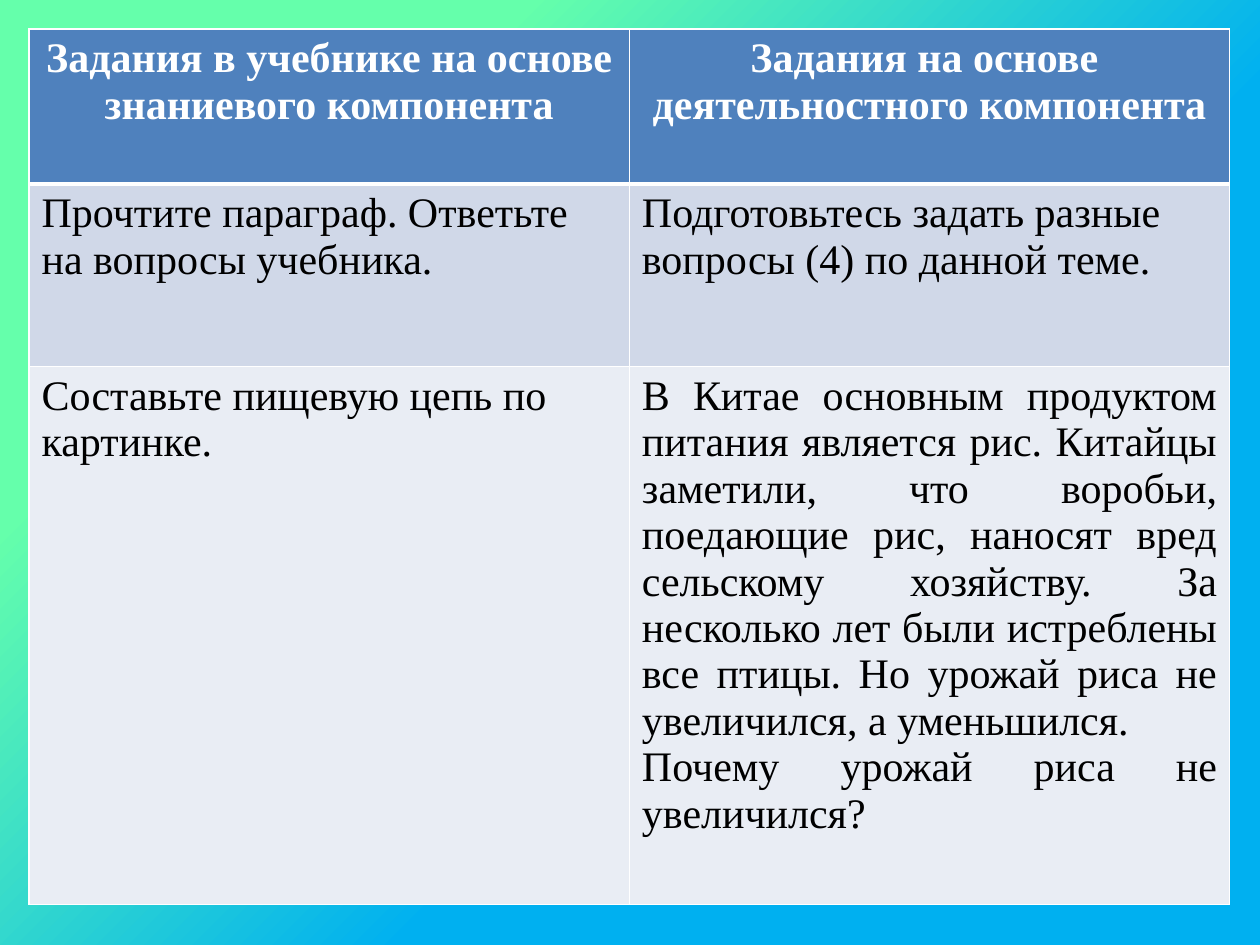
import pptx
import pptx.dml.color
import pptx.enum.text
import pptx.oxml
import pptx.oxml.ns
import pptx.util
from dataclasses import dataclass

Inches = pptx.util.Inches
ALIGN = pptx.enum.text.PP_ALIGN


@dataclass(frozen=True)
class Theme:
    font: str = "Times New Roman"
    size: int = 24
    header_text: str = "FFFFFF"
    body_text: str = "000000"
    row_fills: tuple = ("4F81BD", "D0D8E8", "E9EDF4")
    border: str = "FFFFFF"
    thin: int = 1
    thick: int = 3
    gradient: tuple = (("65FFAB", 0.24), ("00B0F0", 0.61))


THEME = Theme()

# Each row: height in inches, then (alignment, paragraphs) for every cell
ROWS = [
    (1.23, [
        (ALIGN.CENTER, ["Задания в учебнике на основе знаниевого компонента"]),
        (ALIGN.CENTER, ["Задания на основе ", "деятельностного компонента"]),
    ]),
    (1.45, [
        (ALIGN.LEFT, ["Прочтите параграф. Ответьте на вопросы учебника."]),
        (ALIGN.LEFT, ["Подготовьтесь задать разные вопросы (4) по данной теме."]),
    ]),
    (4.27, [
        (ALIGN.LEFT, ["Составьте пищевую цепь по картинке."]),
        (ALIGN.JUSTIFY, [
            "В Китае основным продуктом питания является рис. Китайцы заметили, "
            "что воробьи, поедающие рис, наносят вред сельскому хозяйству. "
            "За несколько лет были истреблены все птицы. "
            "Но урожай риса не увеличился, а уменьшился. ",
            "Почему урожай риса не увеличился?",
        ]),
    ]),
]


def rgb(value):
    return pptx.dml.color.RGBColor.from_string(value)


def paint_background(slide):
    fill = slide.background.fill
    fill.gradient()
    fill.gradient_angle = 315  # counter-clockwise: top left to bottom right
    for stop, (color, position) in zip(fill.gradient_stops, THEME.gradient):
        stop.color.rgb = rgb(color)
        stop.position = position


def set_borders(cell, **widths):
    """Draw the sides L, R, T and B; they must precede the cell's fill."""
    properties = cell._tc.get_or_add_tcPr()
    for index, (side, width) in enumerate(widths.items()):
        properties.insert(index, pptx.oxml.parse_xml(
            f'<a:ln{side} {pptx.oxml.ns.nsdecls("a")} w="{pptx.util.Pt(width)}">'
            f'<a:solidFill><a:srgbClr val="{THEME.border}"/></a:solidFill>'
            f'</a:ln{side}>'))


def write_cell(cell, alignment, paragraphs, is_header):
    frame = cell.text_frame
    for index, text in enumerate(paragraphs):
        paragraph = frame.add_paragraph() if index else frame.paragraphs[0]
        paragraph.alignment = alignment
        run = paragraph.add_run()
        run.text = text
        run.font.name = THEME.font
        run.font.size = pptx.util.Pt(THEME.size)
        run.font.bold = is_header
        run.font.color.rgb = rgb(THEME.header_text if is_header else THEME.body_text)


def add_comparison(slide):
    width, height = 9.53, sum(row_height for row_height, _ in ROWS)
    comparison = slide.shapes.add_table(
        len(ROWS), 2, Inches(0.23), Inches(0.23), Inches(width), Inches(height)).table
    for column in comparison.columns:
        column.width = Inches(width / 2)

    for row, (row_height, cells) in enumerate(ROWS):
        comparison.rows[row].height = Inches(row_height)
        # The heading is set off by a thick rule
        top = THEME.thick if row == 1 else THEME.thin
        bottom = THEME.thick if row == 0 else THEME.thin
        for column, (alignment, paragraphs) in enumerate(cells):
            cell = comparison.cell(row, column)
            cell.fill.solid()
            cell.fill.fore_color.rgb = rgb(THEME.row_fills[row])
            set_borders(cell, L=THEME.thin, R=THEME.thin, T=top, B=bottom)
            write_cell(cell, alignment, paragraphs, is_header=row == 0)


def main():
    deck = pptx.Presentation()
    deck.slide_width, deck.slide_height = Inches(10), Inches(7.5)
    slide = deck.slides.add_slide(deck.slide_layouts[6])
    paint_background(slide)
    add_comparison(slide)
    deck.save("out.pptx")


if __name__ == "__main__":
    main()
